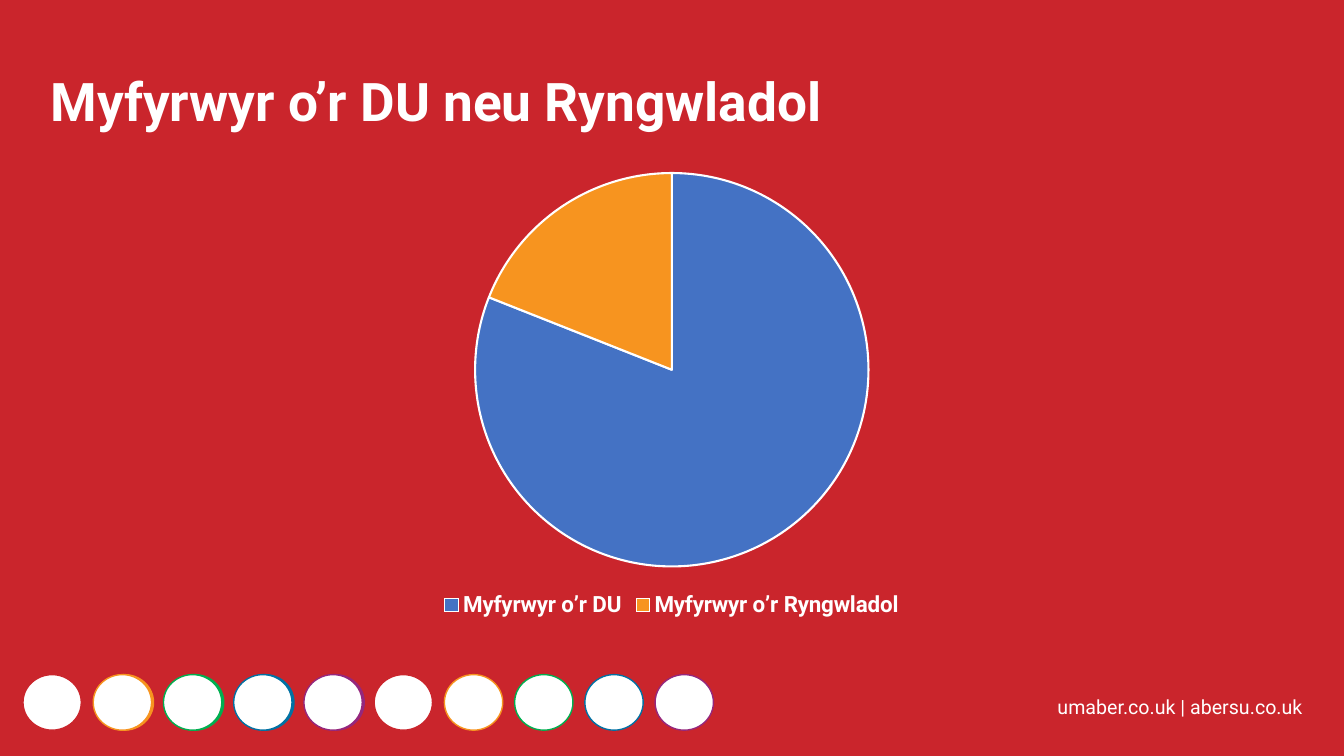
from pptx import Presentation
from pptx.chart.data import CategoryChartData
from pptx.dml.color import RGBColor
from pptx.enum.chart import XL_CHART_TYPE, XL_LEGEND_POSITION
from pptx.enum.shapes import MSO_SHAPE
from pptx.enum.text import MSO_ANCHOR, PP_ALIGN
from pptx.util import Cm, Pt

COLORS = {
    "red": "CA252C", "orange": "F7941F", "green": "00AF50", "teal": "0171A3",
    "purple": "95277D", "blue": "4472C4", "white": "FFFFFF",
}
RING_COLORS = ["red", "orange", "green", "teal", "purple"]
FONT = "Roboto"


def rgb(name):
    return RGBColor.from_string(COLORS[name])


def format_font(font, size, bold=False, color="white"):
    font.name = FONT
    font.size = Pt(size)
    font.bold = bold
    font.color.rgb = rgb(color)


def write_text(sp, text, size, bold=False, line_spacing=None):
    tf = sp.text_frame
    tf.word_wrap = True
    tf.vertical_anchor = MSO_ANCHOR.TOP
    p = tf.paragraphs[0]
    p.alignment = PP_ALIGN.LEFT
    p.line_spacing = line_spacing
    r = p.add_run()
    r.text = text
    format_font(r.font, size, bold)


def add_title(s, text, left, top, width, height):
    sp = s.shapes.title
    sp.left, sp.top, sp.width, sp.height = left, top, width, height
    write_text(sp, text, 38, bold=True, line_spacing=0.9)


def add_pie(s, values, colors, left, top, width, height):
    data = CategoryChartData()
    data.categories = list(values)
    data.add_series("Series 1", list(values.values()))
    chart = s.shapes.add_chart(
        XL_CHART_TYPE.PIE, left, top, width, height, data).chart
    chart.has_title = False
    format_font(chart.font, 16, bold=True)

    # Slices
    plot = chart.plots[0]
    plot.vary_by_categories = True
    for i, color in enumerate(colors):
        fmt = plot.series[0].points[i].format
        fmt.fill.solid()
        fmt.fill.fore_color.rgb = rgb(color)
        fmt.line.color.rgb = rgb("white")
        fmt.line.width = Pt(1.5)

    # Legend
    chart.has_legend = True
    chart.legend.position = XL_LEGEND_POSITION.BOTTOM
    chart.legend.include_in_layout = False
    format_font(chart.legend.font, 16, bold=True)


def add_circles(s, fills, lines, left, top, width, height, pitch):
    for i, (fill, line) in enumerate(zip(fills, lines)):
        sp = s.shapes.add_shape(
            MSO_SHAPE.OVAL, left + i * pitch, top, width, height)
        sp.shadow.inherit = False
        sp.fill.solid()
        sp.fill.fore_color.rgb = rgb(fill)
        sp.line.color.rgb = rgb(line)
        sp.line.width = Pt(1)


def add_footer(s, left, top, width, height):
    # Coloured discs peek out to the right of the first white ones
    size = Cm(1.47), Cm(1.4)
    pitch = Cm(1.77)
    add_circles(s, RING_COLORS, RING_COLORS, left + Cm(0.05), top, *size, pitch)
    rings = RING_COLORS * 2
    add_circles(s, ["white"] * len(rings), rings, left, top, *size, pitch)

    # Web addresses
    box_width = Cm(7.11)
    sp = s.shapes.add_textbox(
        left + width - box_width, top + Cm(0.38), box_width, height - Cm(0.53))
    write_text(sp, "umaber.co.uk | abersu.co.uk", 14)


def build_slide(prs):
    s = prs.slides.add_slide(prs.slide_layouts[5])
    s.background.fill.solid()
    s.background.fill.fore_color.rgb = rgb("red")
    add_footer(s, Cm(0.58), Cm(17), Cm(32.93), Cm(1.4))
    add_title(s, "Myfyrwyr o’r DU neu Ryngwladol",
              Cm(1.02), Cm(1.78), Cm(29), Cm(2.23))
    add_pie(s, {"Myfyrwyr o’r DU": 81, "Myfyrwyr o’r Ryngwladol": 19},
            ["blue", "orange"], Cm(2.26), Cm(4.01), Cm(29.34), Cm(11.66))


def main():
    prs = Presentation()
    prs.slide_width, prs.slide_height = Cm(33.87), Cm(19.05)
    build_slide(prs)
    prs.save("out.pptx")


if __name__ == "__main__":
    main()
